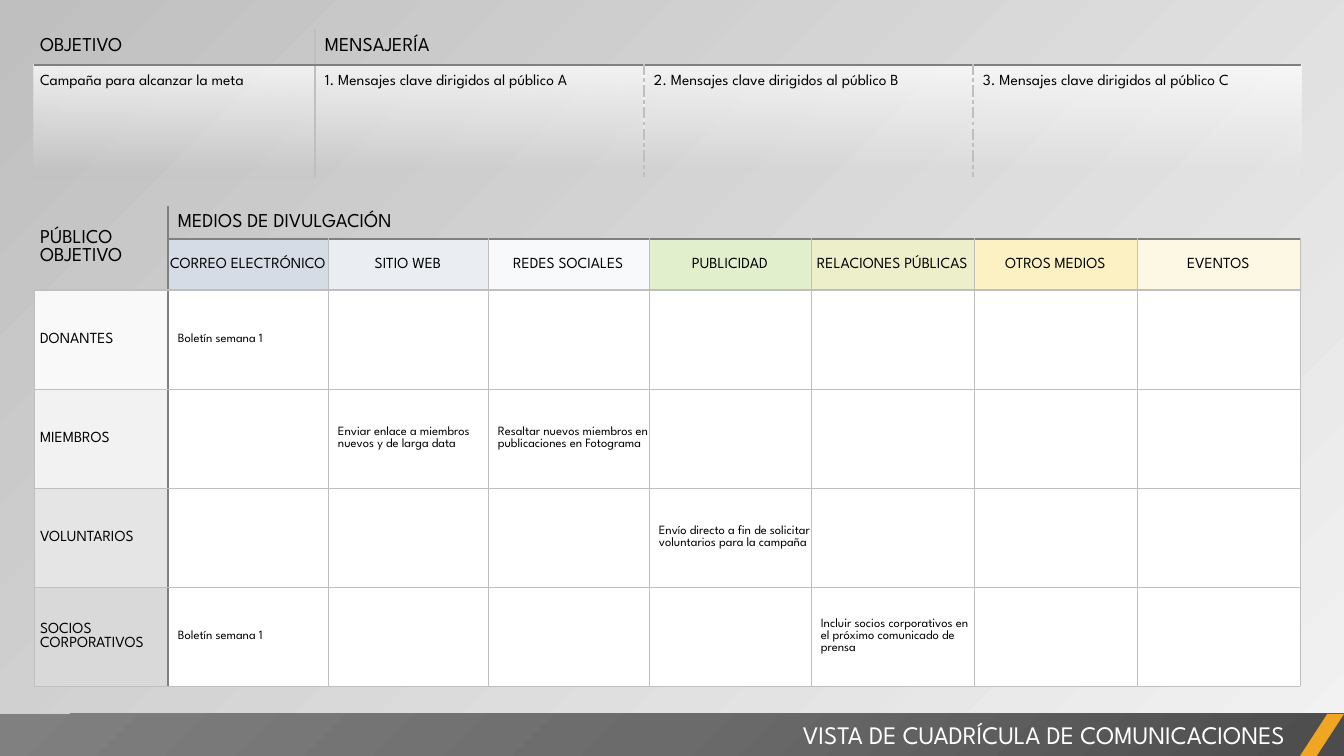
from lxml import etree
from pptx import Presentation
from pptx.dml.color import RGBColor
from pptx.enum.shapes import MSO_SHAPE
from pptx.enum.text import MSO_ANCHOR, MSO_AUTO_SIZE, PP_ALIGN
from pptx.oxml import parse_xml
from pptx.oxml.ns import qn
from pptx.util import Emu, Pt

PX = 914400 / 100.8
FONT = "League Spartan"
NS = "http://schemas.openxmlformats.org/drawingml/2006/main"
NO_STYLE = "{2D5ABB26-0587-4C30-8999-92F81FD0307C}"
COLORS = {"black": "000000", "white": "FFFFFF", "dark": "808080", "light": "BFBFBF",
          "pale": "F2F2F2", "band_mid": "6B6B6B", "band_dark": "4C4C4C", "accent": "F0A622"}

TITLE = "VISTA DE CUADRÍCULA DE COMUNICACIONES"
GOAL_HEADS = ["OBJETIVO", "MENSAJERÍA"]
GOAL_BODY = ["Campaña para alcanzar la meta",
             "1. Mensajes clave dirigidos al público A",
             "2. Mensajes clave dirigidos al público B",
             "3. Mensajes clave dirigidos al público C"]
GRID_HEADS = ["PÚBLICO OBJETIVO", "MEDIOS DE DIVULGACIÓN"]
CHANNELS = [("CORREO ELECTRÓNICO", "D6DCE5"), ("SITIO WEB", "EAEEF3"),
            ("REDES SOCIALES", "F7F9FB"), ("PUBLICIDAD", "E2EFCD"),
            ("RELACIONES PÚBLICAS", "EDEFCB"), ("OTROS MEDIOS", "FCF1C3"),
            ("EVENTOS", "FCF8E4")]
# audience, fill, {channel number: action}
AUDIENCES = [
    ("DONANTES", "F9F9F9", {1: "Boletín semana 1"}),
    ("MIEMBROS", "F2F2F2", {2: "Enviar enlace a miembros nuevos y de larga data",
                            3: "Resaltar nuevos miembros en publicaciones en Fotograma"}),
    ("VOLUNTARIOS", "E5E5E5",
     {4: "Envío directo a fin de solicitar voluntarios para la campaña"}),
    ("SOCIOS CORPORATIVOS", "D9D9D9",
     {1: "Boletín semana 1",
      5: "Incluir socios corporativos en el próximo comunicado de prensa"}),
]
GRID_COLS = [134, 160, 160, 161, 162, 163, 163, 163]
GRID_ROWS = [33, 51] + [99] * len(AUDIENCES)
GOAL_COLS = [281, 329, 329, 328]
GOAL_ROWS = [36, 112]

# line styles: colour, width in points, dash
THIN = ("light", 0.5, "solid")
HEAVY = ("light", 2.25, "solid")
DASHED = ("light", 1, "sysDashDot")
DARK_THIN = ("dark", 1, "solid")
DARK = ("dark", 1.5, "solid")
DARK_HEAVY = ("dark", 2.25, "solid")


def px(n):
    return Emu(round(n * PX))


def gradient(stops, direction):
    """Gradient fill element from (position, colour, opacity) stops in percent."""
    gs = "".join(f'<a:gs pos="{pos * 1000}"><a:srgbClr val="{COLORS[color]}">'
                 f'<a:alpha val="{alpha * 1000}"/></a:srgbClr></a:gs>'
                 for pos, color, alpha in stops)
    return parse_xml(f'<a:gradFill xmlns:a="{NS}" rotWithShape="1"><a:gsLst>{gs}</a:gsLst>'
                     f'{direction}</a:gradFill>')


def linear(degrees):
    return f'<a:lin ang="{degrees * 60000}" scaled="0"/>'


def swap_solid(fill, parent, grad):
    fill.solid()
    parent.replace(parent.find(qn("a:solidFill")), grad)


def style_run(paragraph, size, color="black"):
    for r in paragraph.runs:
        r.font.name = FONT
        r.font.size = Pt(size)
        r.font.bold = False
        r.font.color.rgb = RGBColor.from_string(COLORS[color])


def write(cell, text, size, left=0, top=0, anchor=MSO_ANCHOR.MIDDLE, align=PP_ALIGN.LEFT):
    cell.text = text
    cell.margin_left, cell.margin_top = px(left), px(top)
    cell.vertical_anchor = anchor
    p = cell.text_frame.paragraphs[0]
    p.alignment = align
    style_run(p, size)


def paint(cell, color):
    cell.fill.solid()
    cell.fill.fore_color.rgb = RGBColor.from_string(color)


def new_table(s, left, top, cols, rows):
    frame = s.shapes.add_table(len(rows), len(cols), px(left), px(top),
                               px(sum(cols)), px(sum(rows)))
    table = frame.table
    table.first_row = table.horz_banding = False
    table._tbl.tblPr.find(qn("a:tableStyleId")).text = NO_STYLE
    for part, sizes, name in ((table.columns, cols, "width"), (table.rows, rows, "height")):
        for item, size in zip(part, sizes):
            setattr(item, name, px(size))
    for cell in table.iter_cells():
        cell.margin_left = cell.margin_right = cell.margin_top = cell.margin_bottom = 0
        cell.fill.background()
    return table


def rule_lines(table, v_edge, h_edge):
    """Draw borders; v_edge(r, c) is the line left of a cell, h_edge(r, c) the one above."""
    for r in range(len(table.rows)):
        for c in range(len(table.columns)):
            cell = table.cell(r, c)
            sides = {"L": v_edge(r, c), "R": v_edge(r, c + cell.span_width),
                     "T": h_edge(r, c), "B": h_edge(r + cell.span_height, c)}
            tc_pr = cell._tc.get_or_add_tcPr()
            for i, (side, line) in enumerate(sides.items()):
                ln = etree.Element(qn(f"a:ln{side}"))
                if line:
                    color, width, dash = line
                    ln.set("w", str(Pt(width)))
                    solid = etree.SubElement(ln, qn("a:solidFill"))
                    etree.SubElement(solid, qn("a:srgbClr"), val=COLORS[color])
                    etree.SubElement(ln, qn("a:prstDash"), val=dash)
                else:
                    etree.SubElement(ln, qn("a:noFill"))
                tc_pr.insert(i, ln)


def grid_v(r, c):
    if c == 1:
        return DARK
    return THIN if r >= 2 or (r == 1 and c > 1) else None


def grid_h(r, c):
    if r < 2:
        return DARK_THIN if r == 1 and c else None
    return HEAVY if r == 2 else THIN


def goal_v(r, c):
    if c == 1:
        return HEAVY
    return DASHED if r == 1 and c in (2, 3) else None


def goal_h(r, c):
    return DARK_HEAVY if r == 1 else None


def add_grid(s):
    table = new_table(s, 34, 206, GRID_COLS, GRID_ROWS)
    table.cell(0, 0).merge(table.cell(1, 0))
    table.cell(0, 1).merge(table.cell(0, len(CHANNELS)))
    for c, head in enumerate(GRID_HEADS):
        write(table.cell(0, c), head, 14, left=10 if c else 6)
    for c, (channel, color) in enumerate(CHANNELS, 1):
        write(table.cell(1, c), channel, 11, align=PP_ALIGN.CENTER)
        paint(table.cell(1, c), color)
    for r, (audience, color, actions) in enumerate(AUDIENCES, 2):
        write(table.cell(r, 0), audience, 11, left=6)
        paint(table.cell(r, 0), color)
        for c in range(1, len(CHANNELS) + 1):
            paint(table.cell(r, c), COLORS["white"])
            if c in actions:
                write(table.cell(r, c), actions[c], 9, left=10)
    rule_lines(table, grid_v, grid_h)


def add_footer(s):
    band = s.shapes.add_shape(MSO_SHAPE.RECTANGLE, 0, px(714), px(1344), px(42))
    corner = s.shapes.add_shape(MSO_SHAPE.PARALLELOGRAM, px(1300), px(714), px(44), px(42))
    corner.adjustments[0] = 0.65
    for shape in (band, corner):
        shape.shadow.inherit = False
        shape.line.fill.background()
    swap_solid(band.fill, band._element.spPr, gradient(
        [(0, "band_dark", 100), (50, "band_mid", 100), (100, "dark", 100)],
        '<a:path path="circle"><a:fillToRect l="100000" t="100000"/></a:path>'))
    paint(corner, COLORS["accent"])

    title = s.shapes.title
    title.left, title.top, title.width, title.height = px(529), px(714), px(766), px(40)
    tf = title.text_frame
    tf.text = TITLE
    tf.auto_size = MSO_AUTO_SIZE.NONE
    tf.vertical_anchor = MSO_ANCHOR.TOP
    tf.paragraphs[0].alignment = PP_ALIGN.RIGHT
    style_run(tf.paragraphs[0], 18, "white")
    corner._element.addnext(title._element)


def add_goals(s):
    table = new_table(s, 34, 29, GOAL_COLS, GOAL_ROWS)
    table.cell(0, 1).merge(table.cell(0, 3))
    for c, head in enumerate(GOAL_HEADS):
        write(table.cell(0, c), head, 14, left=10 if c else 6)
    for c, text in enumerate(GOAL_BODY):
        cell = table.cell(1, c)
        write(cell, text, 11, left=10 if c else 6, top=10, anchor=MSO_ANCHOR.TOP)
        swap_solid(cell.fill, cell._tc.tcPr,
                   gradient([(0, "white", 75), (93, "white", 0)], linear(90)))
    rule_lines(table, goal_v, goal_h)


def main():
    prs = Presentation()
    prs.slide_width, prs.slide_height = px(1344), px(756)
    s = prs.slides.add_slide(prs.slide_layouts[5])
    s.background.fill.solid()
    bg_pr = s._element.cSld.bg.bgPr
    bg_pr.replace(bg_pr.find(qn("a:solidFill")),
                  gradient([(0, "pale", 40), (100, "light", 100)], linear(225)))
    add_grid(s)
    add_footer(s)
    add_goals(s)
    prs.save("out.pptx")


if __name__ == "__main__":
    main()
